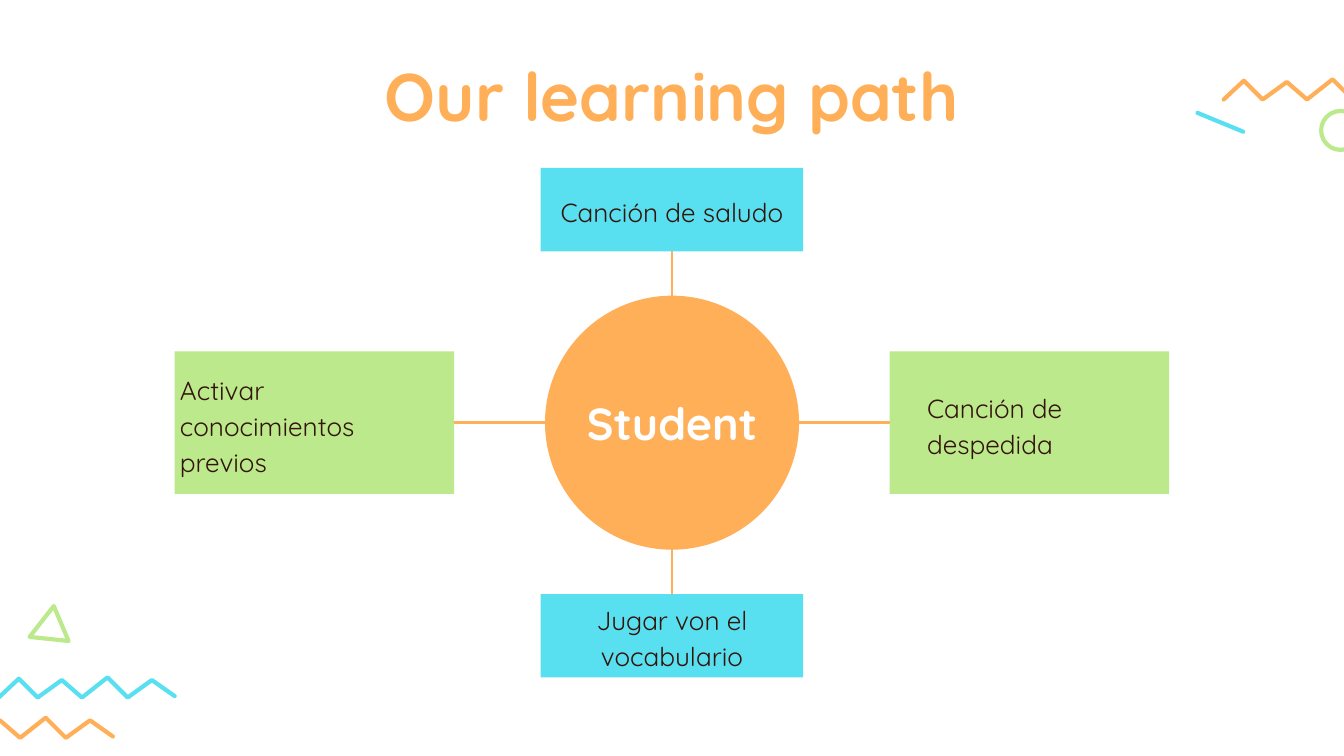
from dataclasses import dataclass

from lxml import etree
from pptx import Presentation
from pptx.dml.color import RGBColor
from pptx.enum.shapes import MSO_CONNECTOR, MSO_SHAPE
from pptx.enum.text import MSO_ANCHOR, MSO_AUTO_SIZE, PP_ALIGN
from pptx.oxml.ns import qn
from pptx.util import Emu, Inches, Pt

LEFT, CENTER = PP_ALIGN.LEFT, PP_ALIGN.CENTER
TOP, MIDDLE = MSO_ANCHOR.TOP, MSO_ANCHOR.MIDDLE
RECT, OVAL = MSO_SHAPE.RECTANGLE, MSO_SHAPE.OVAL
STRAIGHT = MSO_CONNECTOR.STRAIGHT
NO_FIT = MSO_AUTO_SIZE.NONE

SLIDE_W = Inches(10)
SLIDE_H = Emu(SLIDE_W * 9 // 16)
COLUMNS = 100
CELL = SLIDE_W // COLUMNS


@dataclass(frozen=True)
class Theme:
    font: str = "Quicksand"
    orange: str = "FFAF57"
    green: str = "BCE98C"
    blue: str = "58E0F1"
    ink: str = "33140B"
    white: str = "FFFFFF"
    title: float = 36
    hub: float = 24
    body: float = 14
    link: float = 1.5
    doodle: float = 2.25


@dataclass(frozen=True)
class Area:
    x: float
    y: float
    w: float
    h: float

    def emu(self) -> tuple:
        return tuple(cells(v) for v in (self.x, self.y, self.w, self.h))


@dataclass(frozen=True)
class Step:
    text: str
    box: Area
    label: Area
    color: str
    align: PP_ALIGN


@dataclass(frozen=True)
class Zigzag:
    x: float
    y: float
    color: str


T = Theme()
STEPS = [
    Step("Canción de despedida", Area(66.2, 26.15, 20.8, 10.6),
         Area(68, 26.2, 17.3, 10.6), T.green, LEFT),
    Step("Activar conocimientos previos", Area(13, 26.15, 20.8, 10.6),
         Area(12.4, 26.2, 20.5, 10.6), T.green, LEFT),
    Step("Jugar von el vocabulario", Area(40.23, 44.2, 19.54, 6.2),
         Area(39.9, 44.8, 20.2, 5), T.blue, CENTER),
    Step("Canción de saludo", Area(40.23, 12.5, 19.54, 6.2),
         Area(39.9, 13.1, 20.2, 5), T.blue, CENTER),
]
ZIGZAGS = [Zigzag(-0.1, 50.4, T.blue), Zigzag(-4.7, 53.4, T.orange),
           Zigzag(91.05, 5.9, T.orange)]
WAVE = [(0, 1.5), (1.5, 0.1), (2.9, 1.5), (4.7, 0.2), (6.2, 1.5),
        (8.1, 0), (9.6, 1.5), (11.4, 0.2), (13.1, 1.4)]
TRIANGLE = [(5.1, 47.7), (4, 45.1), (2.2, 47.4)]


def cells(value: float) -> Emu:
    return Emu(round(value * CELL))


def rgb(color: str) -> RGBColor:
    return RGBColor.from_string(color)


def style_line(sp, color: str, width: float) -> None:
    sp.line.color.rgb = rgb(color)
    sp.line.width = Pt(width)


def round_ends(sp) -> None:
    ln = sp._element.spPr.find(qn("a:ln"))
    ln.set("cap", "rnd")
    etree.SubElement(ln, qn("a:round"))


def add_filled(shapes, kind: MSO_SHAPE, area: Area, color: str) -> None:
    sp = shapes.add_shape(kind, *area.emu())
    sp.shadow.inherit = False
    sp.fill.solid()
    sp.fill.fore_color.rgb = rgb(color)
    sp.line.fill.background()


def add_line(shapes, start: tuple, end: tuple, color: str, width: float):
    sp = shapes.add_connector(STRAIGHT, *map(cells, start + end))
    style_line(sp, color, width)
    etree.SubElement(sp._element.spPr, qn("a:effectLst"))
    return sp


def outline(sp, color: str) -> None:
    sp.shadow.inherit = False
    sp.fill.background()
    style_line(sp, color, T.doodle)
    round_ends(sp)


def add_path(shapes, points: list, color: str, close: bool = False) -> None:
    first, *rest = [(cells(x), cells(y)) for x, y in points]
    builder = shapes.build_freeform(*first)
    builder.add_line_segments(rest, close=close)
    outline(builder.convert_to_shape(), color)


def write(sp, text: str, *, size: float, color: str, bold: bool = False,
          align: PP_ALIGN = CENTER, anchor: MSO_ANCHOR = MIDDLE,
          spacing: float = 1.0) -> None:
    tf = sp.text_frame
    tf.word_wrap = True
    tf.auto_size = NO_FIT
    tf.vertical_anchor = anchor
    tf.margin_left = tf.margin_right = cells(1)
    tf.margin_top = tf.margin_bottom = cells(1)
    p = tf.paragraphs[0]
    p.alignment = align
    p.line_spacing = spacing
    r = p.add_run()
    r.text = text
    r.font.name = T.font
    r.font.size = Pt(size)
    r.font.bold = bold
    r.font.color.rgb = rgb(color)


def draw_doodles(shapes) -> None:
    for z in ZIGZAGS:
        add_path(shapes, [(z.x + x, z.y + y) for x, y in WAVE], z.color)
    add_path(shapes, TRIANGLE, T.green, close=True)
    outline(shapes.add_shape(OVAL, *Area(98.3, 8.25, 2.9, 2.9).emu()), T.green)
    round_ends(add_line(shapes, (89.1, 8.4), (92.5, 9.8), T.blue, T.doodle))


def draw_path(shapes) -> None:
    add_line(shapes, (50, 47.9), (50, 15.1), T.orange, T.link)
    add_line(shapes, (27, 31.45), (75, 31.45), T.orange, T.link)
    add_filled(shapes, OVAL, Area(40.55, 22, 18.9, 18.9), T.orange)
    hub = shapes.add_textbox(*Area(41.05, 29.6, 17.9, 3.7).emu())
    write(hub, "Student", size=T.hub, color=T.white, bold=True)
    for step in STEPS:
        add_filled(shapes, RECT, step.box, step.color)
        label = shapes.add_textbox(*step.label.emu())
        write(label, step.text, size=T.body, color=T.ink,
              align=step.align, spacing=1.15)


def main() -> None:
    prs = Presentation()
    prs.slide_width, prs.slide_height = SLIDE_W, SLIDE_H
    slide = prs.slides.add_slide(prs.slide_layouts[5])
    title = slide.shapes.title
    title.left, title.top, title.width, title.height = Area(13, 3.05, 74, 10.3).emu()
    write(title, "Our learning path", size=T.title, color=T.orange,
          bold=True, anchor=TOP)
    draw_doodles(slide.shapes)
    draw_path(slide.shapes)
    prs.save("out.pptx")


if __name__ == "__main__":
    main()
